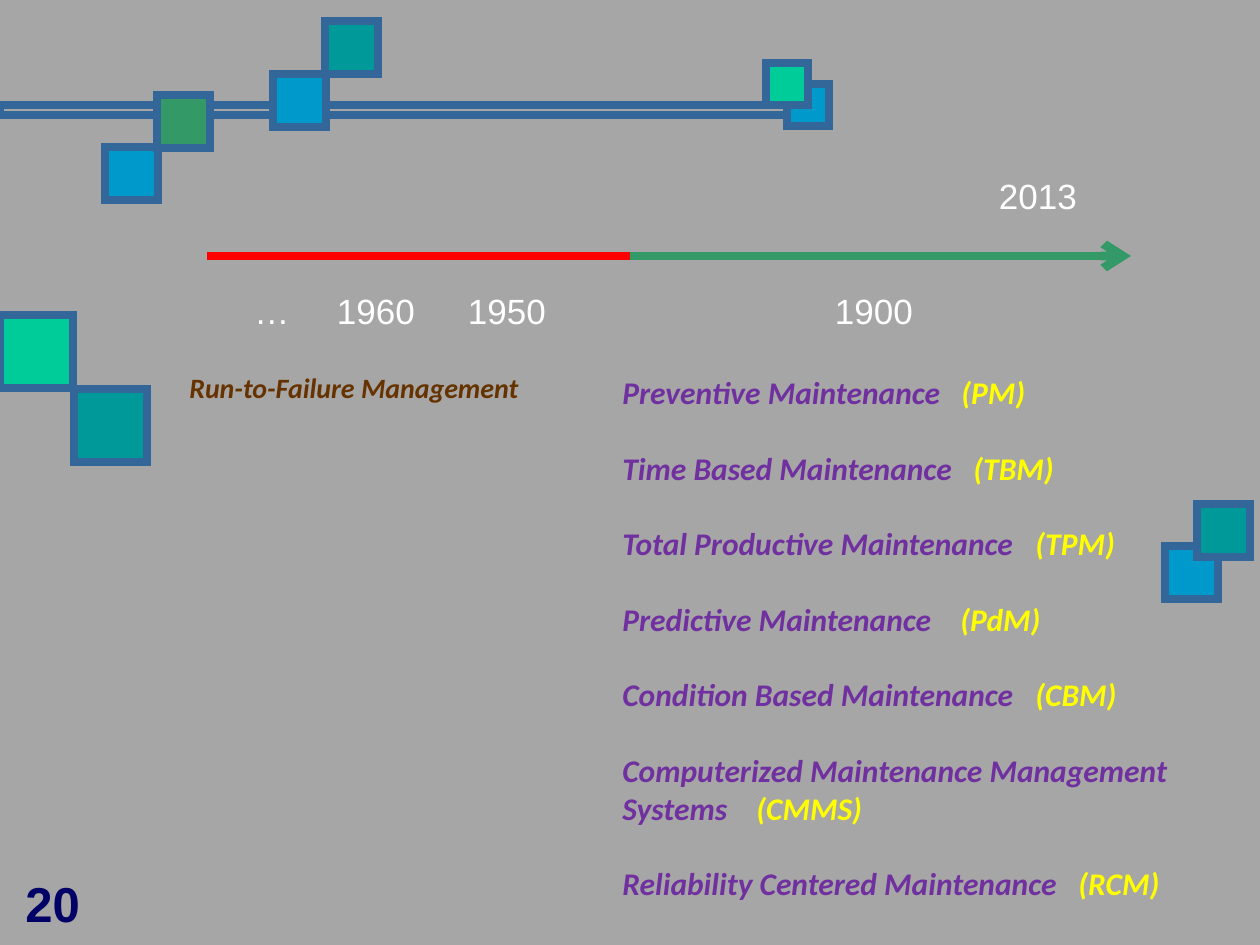
from lxml import etree
from pptx import Presentation
from pptx.dml.color import RGBColor
from pptx.enum.shapes import MSO_CONNECTOR, MSO_SHAPE
from pptx.enum.text import MSO_ANCHOR, PP_ALIGN
from pptx.oxml.ns import qn
from pptx.util import Emu, Pt

STRAIGHT = MSO_CONNECTOR.STRAIGHT
RECTANGLE = MSO_SHAPE.RECTANGLE
TOP, MIDDLE = MSO_ANCHOR.TOP, MSO_ANCHOR.MIDDLE
LEFT, CENTER = PP_ALIGN.LEFT, PP_ALIGN.CENTER

EMU_PER_PX = 914400 / 126
BORDER, BLUE, MINT, TEAL, GREEN = "336699", "0099CC", "00CC99", "009999", "339966"
WHITE, RED, NAVY, BROWN = "FFFFFF", "FF0000", "000066", "663300"
PURPLE, YELLOW = "7030A0", "FFFF00"
SMALL, MEDIUM, LARGE = 42, 53, 73

# left, top, side, fill
SQUARES = [
    (787, 84, SMALL, BLUE),
    (766, 63, SMALL, MINT),
    (1165, 546, MEDIUM, BLUE),
    (1197, 504, MEDIUM, TEAL),
    (0, 315, LARGE, MINT),
    (74, 389, LARGE, TEAL),
    (273, 74, MEDIUM, BLUE),
    (105, 147, MEDIUM, BLUE),
    (157, 95, MEDIUM, GREEN),
    (325, 21, MEDIUM, TEAL),
]

# label, centre, top
YEARS = [
    ("2013", 1038, 168),
    ("…", 272, 283),
    ("1960", 376, 283),
    ("1950", 507, 283),
    ("1900", 874, 283),
]

# name, acronym, offset of the acronym from the text's left edge
STRATEGIES = [
    ("Preventive Maintenance", "(PM)", 339),
    ("Time Based Maintenance", "(TBM)", 351),
    ("Total Productive Maintenance", "(TPM)", 413),
    ("Predictive Maintenance", "(PdM)", 338),
    ("Condition Based Maintenance", "(CBM)", 413),
    ("Computerized Maintenance Management Systems", "(CMMS)", 134),
    ("Reliability Centered Maintenance", "(RCM)", 456),
]


def px(length):
    return Emu(round(length * EMU_PER_PX))


def color(hex_value):
    return RGBColor.from_string(hex_value)


def add_box(slide, left, top, width, height, fill=None):
    shape = slide.shapes.add_shape(RECTANGLE, px(left), px(top), px(width), px(height))
    shape.shadow.inherit = False
    if fill:
        shape.fill.solid()
        shape.fill.fore_color.rgb = color(fill)
    else:
        shape.fill.background()
    shape.line.color.rgb = color(BORDER)
    shape.line.width = Pt(4.5)
    # Square outline corners
    etree.SubElement(shape.line._get_or_add_ln(), qn("a:miter"), lim="800000")


def add_timeline(slide, start, end, y, line_color, arrow=False):
    connector = slide.shapes.add_connector(STRAIGHT, px(start), px(y), px(end), px(y))
    connector.line.color.rgb = color(line_color)
    connector.line.width = Pt(5)
    if arrow:
        etree.SubElement(connector.line._get_or_add_ln(), qn("a:tailEnd"), type="arrow")
    etree.SubElement(connector._element.spPr, qn("a:effectLst"))


def add_text_frame(slide, left, top, width, height, anchor=TOP):
    box = slide.shapes.add_textbox(px(left), px(top), px(width), px(height))
    box.text_frame.word_wrap = True
    box.text_frame.vertical_anchor = anchor
    return box.text_frame


def style_font(font, name, size, bold=False, italic=False):
    font.name = name
    font.size = Pt(size)
    font.bold = bold
    font.italic = italic


def add_label(slide, text, bounds, font_color, name, size,
              bold=False, italic=False, alignment=LEFT, anchor=TOP):
    paragraph = add_text_frame(slide, *bounds, anchor).paragraphs[0]
    paragraph.text = text
    paragraph.alignment = alignment
    style_font(paragraph.font, name, size, bold, italic)
    paragraph.font.color.rgb = color(font_color)


def add_tab_stop(paragraph, offset):
    properties = paragraph._p.get_or_add_pPr()
    tabs = etree.Element(qn("a:tabLst"))
    etree.SubElement(tabs, qn("a:tab"), pos=str(px(offset)), algn="l")
    # Tab stops precede the default run properties
    properties.find(qn("a:defRPr")).addprevious(tabs)


def add_strategies(slide):
    frame = add_text_frame(slide, 610, 364, 571, 547, MIDDLE)
    for index, (name, acronym, offset) in enumerate(STRATEGIES):
        paragraph = frame.add_paragraph() if index else frame.paragraphs[0]
        if index:
            paragraph.space_before = Pt(21.6)
        style_font(paragraph.font, "Calibri", 18, bold=True, italic=True)
        add_tab_stop(paragraph, offset)
        for text, font_color in ((name + "\t", PURPLE), (acronym, YELLOW)):
            run = paragraph.add_run()
            run.text = text
            run.font.color.rgb = color(font_color)


def main():
    presentation = Presentation()
    presentation.slide_width, presentation.slide_height = px(1260), px(945)
    slide = presentation.slides.add_slide(presentation.slide_layouts[6])
    slide.background.fill.solid()
    slide.background.fill.fore_color.rgb = color("A6A6A6")

    # Decorative band and squares
    add_box(slide, 0, 105, 808, 10)
    for left, top, side, fill in SQUARES:
        add_box(slide, left, top, side, side, fill)

    # Timeline and its years
    add_timeline(slide, 630, 1131, 256, GREEN, arrow=True)
    add_timeline(slide, 207, 630, 256, RED)
    for label, center, top in YEARS:
        add_label(slide, label, (center - 60, top, 120, 55), WHITE, "Arial", 20,
                  alignment=CENTER)

    # Maintenance approaches
    add_label(slide, "Run-to-Failure Management", (177, 364, 404, 47), BROWN,
              "Calibri", 16, bold=True, italic=True, anchor=MIDDLE)
    add_strategies(slide)

    # Slide number
    add_label(slide, "20", (0, 861, 105, 84), NAVY, "Arial", 28, bold=True,
              alignment=CENTER, anchor=MIDDLE)

    presentation.save("out.pptx")


if __name__ == "__main__":
    main()
